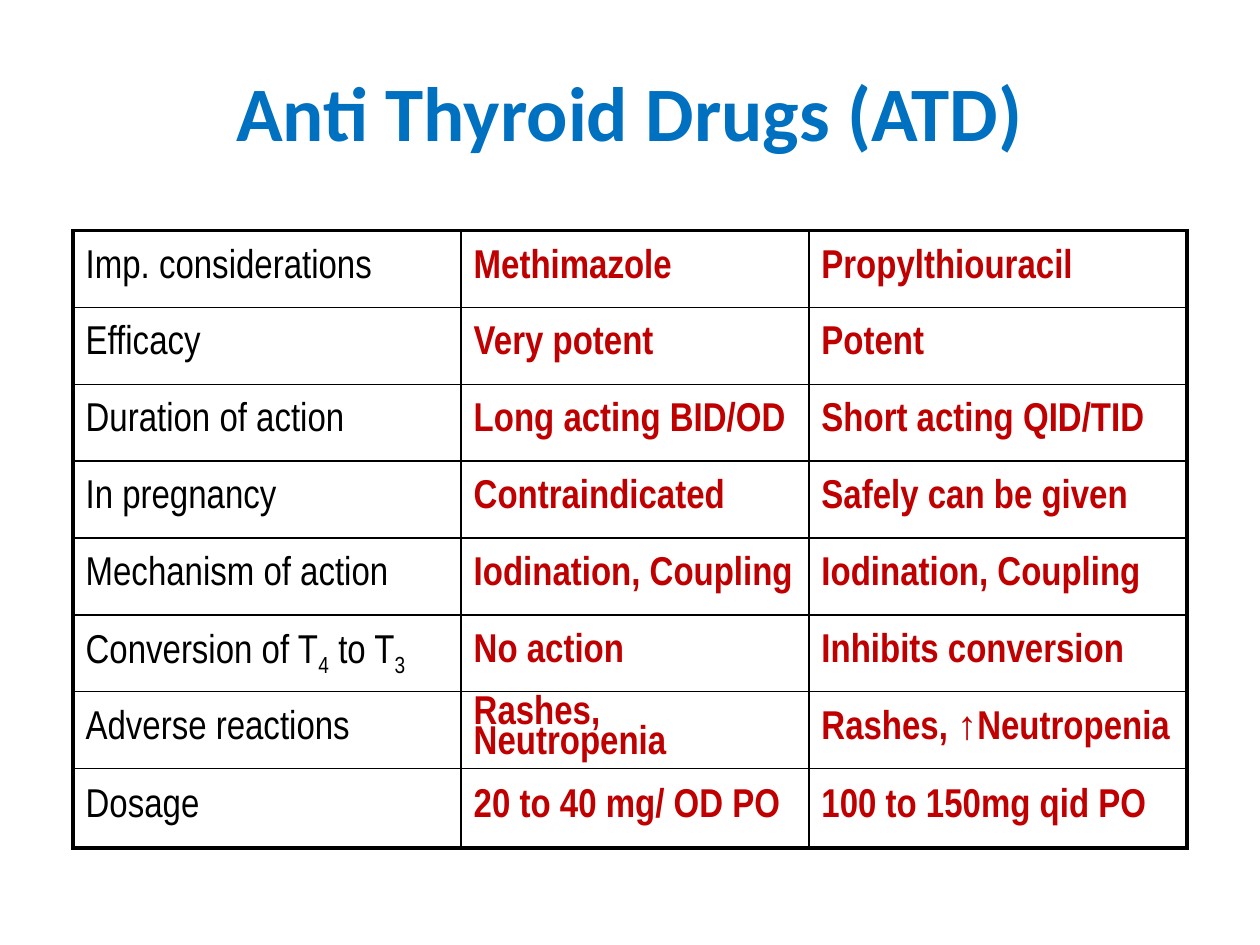
from lxml.etree import SubElement
from pptx import Presentation
from pptx.dml.color import RGBColor
from pptx.enum.text import MSO_ANCHOR as ANCHOR, PP_ALIGN as ALIGN
from pptx.oxml.ns import qn
from pptx.util import Inches, Pt

COLORS = {"title": "0070C0", "label": "000000", "drug": "C00000", "line": "000000"}
ROWS = [
    ("Imp. considerations", "Methimazole", "Propylthiouracil"),
    ("Efficacy", "Very potent", "Potent"),
    ("Duration of action", "Long acting BID/OD", "Short acting QID/TID"),
    ("In pregnancy", "Contraindicated", "Safely can be given"),
    ("Mechanism of action", "Iodination, Coupling", "Iodination, Coupling"),
    ("Conversion of T_4_ to T_3_", "No action", "Inhibits conversion"),
    ("Adverse reactions", "Rashes, Neutropenia", "Rashes, ↑Neutropenia"),
    ("Dosage", "20 to 40 mg/ OD PO", "100 to 150mg qid PO"),
]


def write(tf, text, font, size, color, bold=False, align=ALIGN.LEFT, spacing=1.0):
    p = tf.paragraphs[0]
    p.alignment, p.line_spacing = align, spacing
    for i, part in enumerate(text.split("_")):
        if not part:
            continue
        r = p.add_run()
        r.text = part
        r.font.name, r.font.size, r.font.bold = font, Pt(size), bold
        r.font.color.rgb = RGBColor.from_string(COLORS[color])
        if i % 2:
            r.font._element.set("baseline", "-25000")


class Deck:
    outer, inner = 2.25, 1

    def __init__(self, width, height):
        self.prs = Presentation()
        self.prs.slide_width, self.prs.slide_height = Inches(width), Inches(height)
        self.s = self.prs.slides.add_slide(self.prs.slide_layouts[5])

    def box(self, x, y, w, h):
        width, height = self.prs.slide_width, self.prs.slide_height
        return [round(v) for v in (x * width, y * height, w * width, h * height)]

    def title(self, text, *shares):
        sp = self.s.shapes.title
        sp.left, sp.top, sp.width, sp.height = self.box(*shares)
        sp.text_frame.vertical_anchor = ANCHOR.MIDDLE
        write(sp.text_frame, text, "Calibri", 44, "title", True, ALIGN.CENTER)

    def border(self, cell, side, width):
        ln = SubElement(cell._tc.get_or_add_tcPr(), qn("a:ln" + side), w=str(Pt(width)))
        fill = SubElement(ln, qn("a:solidFill"))
        SubElement(fill, qn("a:srgbClr"), val=COLORS["line"])

    def table(self, rows, x, y, col_shares, row_shares):
        frame = self.s.shapes.add_table(
            len(rows), len(col_shares), *self.box(x, y, sum(col_shares), sum(row_shares)))
        table = frame.table
        table.first_row = table.horz_banding = False
        for col, share in zip(table.columns, col_shares):
            col.width = round(share * self.prs.slide_width)
        for row, share in zip(table.rows, row_shares):
            row.height = round(share * self.prs.slide_height)
        last_row, last_col = len(rows) - 1, len(col_shares) - 1
        for i, texts in enumerate(rows):
            for j, text in enumerate(texts):
                cell = table.cell(i, j)
                cell.vertical_anchor = ANCHOR.MIDDLE
                edges = {"L": j == 0, "R": j == last_col, "T": i == 0, "B": i == last_row}
                for side, is_outer in edges.items():
                    self.border(cell, side, self.outer if is_outer else self.inner)
                cell.fill.background()
                write(cell.text_frame, text, "Arial Narrow", 23,
                      "drug" if j else "label", bold=j > 0, spacing=0.8)


def main():
    deck = Deck(10, 7.5)
    deck.title("Anti Thyroid Drugs (ATD)", 0.05, 0.25 / 7.5, 0.9, 1.25 / 7.5)
    deck.table(ROWS, 0.058, 1.83 / 7.5, [0.308, 0.276, 0.3],
               [0.61 / 7.5] * 7 + [0.63 / 7.5])
    deck.prs.save("out.pptx")


if __name__ == "__main__":
    main()
